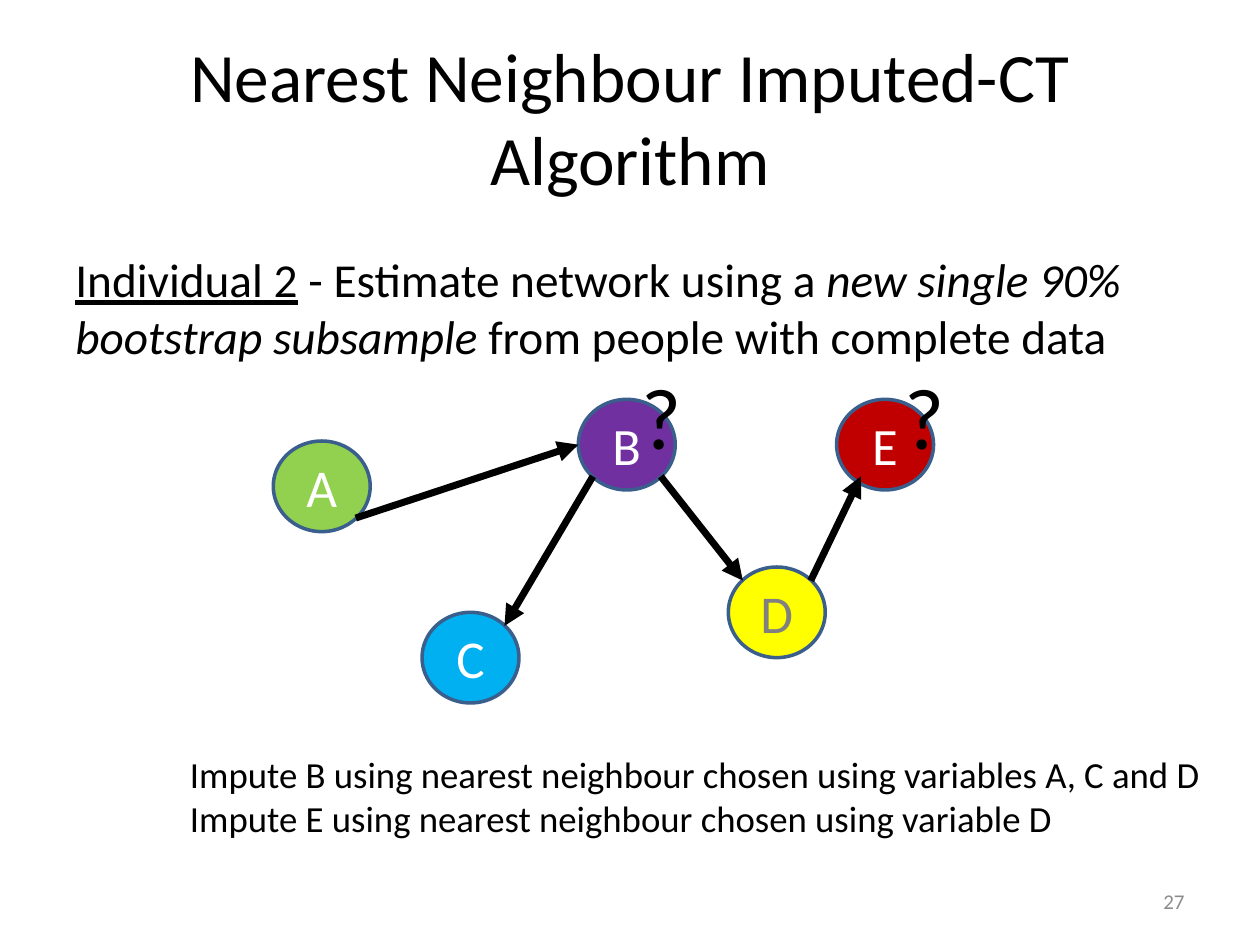
from dataclasses import dataclass

from lxml import etree
from pptx import Presentation
from pptx.dml.color import RGBColor
from pptx.enum.shapes import MSO_CONNECTOR, MSO_SHAPE
from pptx.enum.text import MSO_ANCHOR, PP_ALIGN
from pptx.oxml.ns import qn
from pptx.util import Pt

ELLIPSE = MSO_SHAPE.OVAL
STRAIGHT = MSO_CONNECTOR.STRAIGHT
MIDDLE = MSO_ANCHOR.MIDDLE
TOP = MSO_ANCHOR.TOP
LEFT = PP_ALIGN.LEFT
CENTER = PP_ALIGN.CENTER
RIGHT = PP_ALIGN.RIGHT

FONT = "Calibri"
BLACK = "000000"
NODE_WIDTH, NODE_HEIGHT = 55.4, 51.8

LEFT_SIDE = (0, 0.5)
TOP_LEFT = (0.15, 0.15)
TOP_RIGHT = (0.85, 0.15)
BOTTOM_LEFT = (0.15, 0.85)
BOTTOM_RIGHT = (0.85, 0.85)
LOWER_LEFT = (0.25, 0.85)


@dataclass
class Node:
    left: float
    top: float
    fill: str
    size: float = 30.4
    color: str = "FFFFFF"

    def port(self, spot: tuple) -> tuple:
        return (Pt(self.left + spot[0] * NODE_WIDTH),
                Pt(self.top + spot[1] * NODE_HEIGHT))


@dataclass
class Edge:
    source: str
    source_spot: tuple
    target: str
    target_spot: tuple


@dataclass
class Label:
    lines: list
    left: float
    top: float
    width: float
    height: float
    size: float
    wrap: bool = True
    color: str = BLACK
    align: int = LEFT
    anchor: int = TOP


NODES = {
    "C": Node(241.2, 349.9, "00B0F0"),
    "A": Node(156.2, 252, "92D050"),
    "B": Node(330.5, 228.2, "7030A0", 30),
    "D": Node(416.2, 324, "FFFF00", color="808080"),
    "E": Node(478.1, 228.2, "C00000", 30),
}
EDGES = [
    Edge("A", BOTTOM_RIGHT, "B", LEFT_SIDE),
    Edge("B", BOTTOM_LEFT, "C", TOP_RIGHT),
    Edge("D", TOP_RIGHT, "E", LOWER_LEFT),
    Edge("B", BOTTOM_RIGHT, "D", TOP_LEFT),
]
PLAIN, UNDERLINED, ITALIC = {}, {"underline": True}, {"italic": True}
LABELS = [
    Label([[("Impute B using nearest neighbour chosen using variables A, C and D", PLAIN)],
           [("Impute E using nearest neighbour chosen using variable D", PLAIN)]],
          101.5, 426.2, 592.6, 58.3, 21, wrap=False),
    Label([[("Individual 2", UNDERLINED),
            (" - Estimate network using a ", PLAIN),
            ("new single 90% bootstrap subsample", ITALIC),
            (" from people with complete data", PLAIN)]],
          36, 139.7, 648, 72.7, 27),
    *(Label([[("?", PLAIN)]], left, 203.8, 37.4, 67, 49.5, wrap=False)
      for left in (359.3, 509.8)),
    Label([[("27", PLAIN)]], 516.2, 500.4, 167.8, 28.8, 12,
          color="8C8C8C", align=RIGHT, anchor=MIDDLE),
]


def rgb(value: str) -> RGBColor:
    return RGBColor.from_string(value)


def style_font(font, size: float, color: str) -> None:
    font.name = FONT
    font.size = Pt(size)
    font.color.rgb = rgb(color)


def place(shape, left: float, top: float, width: float, height: float) -> None:
    shape.left, shape.top = Pt(left), Pt(top)
    shape.width, shape.height = Pt(width), Pt(height)


def write_title(title) -> None:
    place(title, 36, 21.6, 648, 90)
    title.text_frame.text = "Nearest Neighbour Imputed-CT Algorithm"
    title.text_frame.vertical_anchor = MIDDLE
    heading = title.text_frame.paragraphs[0]
    heading.alignment = CENTER
    style_font(heading.runs[0].font, 39.6, BLACK)


def draw_node(shapes, letter: str, node: Node) -> None:
    circle = shapes.add_shape(ELLIPSE, Pt(node.left), Pt(node.top),
                              Pt(NODE_WIDTH), Pt(NODE_HEIGHT))
    circle.shadow.inherit = False
    circle.fill.solid()
    circle.fill.fore_color.rgb = rgb(node.fill)
    circle.line.color.rgb = rgb("3A5F8C")
    circle.line.width = Pt(2)
    circle.text_frame.text = letter
    circle.text_frame.vertical_anchor = MIDDLE
    paragraph = circle.text_frame.paragraphs[0]
    paragraph.alignment = CENTER
    style_font(paragraph.runs[0].font, node.size, node.color)


def draw_edge(shapes, edge: Edge) -> None:
    arrow = shapes.add_connector(STRAIGHT,
                                 *NODES[edge.source].port(edge.source_spot),
                                 *NODES[edge.target].port(edge.target_spot))
    arrow.line.color.rgb = rgb(BLACK)
    arrow.line.width = Pt(4)
    etree.SubElement(arrow.line._get_or_add_ln(), qn("a:tailEnd"), type="triangle")
    etree.SubElement(arrow._element.spPr, qn("a:effectLst"))


def draw_label(shapes, label: Label) -> None:
    box = shapes.add_textbox(Pt(label.left), Pt(label.top),
                             Pt(label.width), Pt(label.height))
    frame = box.text_frame
    frame.word_wrap = label.wrap
    frame.vertical_anchor = label.anchor
    for index, line in enumerate(label.lines):
        paragraph = frame.add_paragraph() if index else frame.paragraphs[0]
        paragraph.alignment = label.align
        for text, emphasis in line:
            run = paragraph.add_run()
            run.text = text
            style_font(run.font, label.size, label.color)
            run.font.underline = emphasis.get("underline")
            run.font.italic = emphasis.get("italic")


def main() -> None:
    deck = Presentation()
    deck.slide_width, deck.slide_height = Pt(720), Pt(540)
    slide = deck.slides.add_slide(deck.slide_layouts[5])
    write_title(slide.shapes.title)
    for letter, node in NODES.items():
        draw_node(slide.shapes, letter, node)
    for edge in EDGES:
        draw_edge(slide.shapes, edge)
    for label in LABELS:
        draw_label(slide.shapes, label)
    deck.save("out.pptx")


if __name__ == "__main__":
    main()
